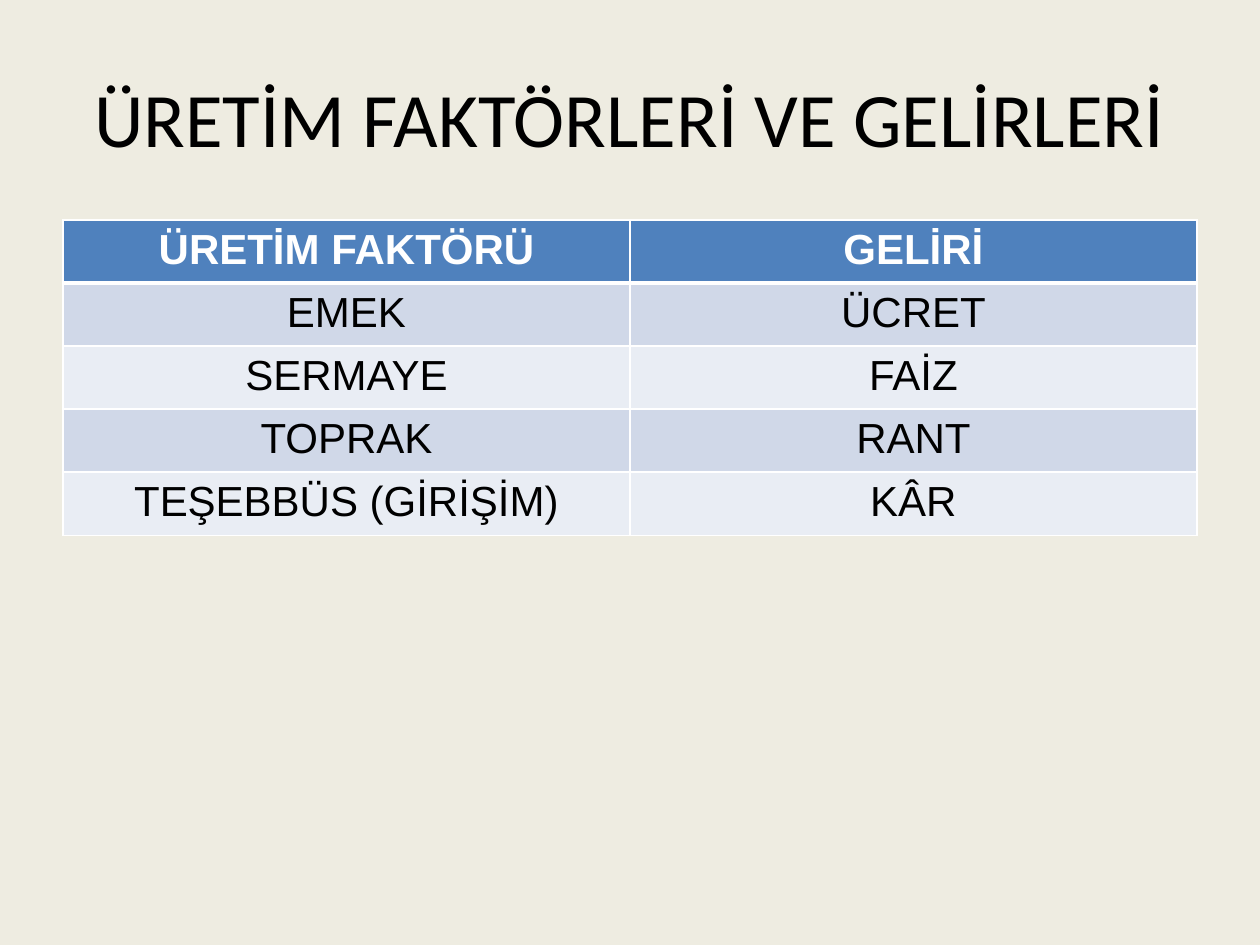
from lxml.etree import SubElement
from pptx import Presentation
from pptx.dml.color import RGBColor
from pptx.enum.text import MSO_ANCHOR, PP_ALIGN
from pptx.oxml.ns import qn
from pptx.util import Pt

PX = 914400 // 126
BACKGROUND = RGBColor(0xEE, 0xEC, 0xE1)
HEADER_BLUE = RGBColor(0x4F, 0x81, 0xBD)
BAND_DARK = RGBColor(0xD0, 0xD8, 0xE8)
BAND_LIGHT = RGBColor(0xE9, 0xED, 0xF4)
WHITE = RGBColor(0xFF, 0xFF, 0xFF)
BLACK = RGBColor(0, 0, 0)

ROWS = [
    ("ÜRETİM FAKTÖRÜ", "GELİRİ"),
    ("EMEK", "ÜCRET"),
    ("SERMAYE", "FAİZ"),
    ("TOPRAK", "RANT"),
    ("TEŞEBBÜS (GİRİŞİM)", "KÂR"),
]


def add_centred_text(frame, text, font, size, color, bold=False):
    para = frame.paragraphs[0]
    para.alignment = PP_ALIGN.CENTER
    span = para.add_run()
    span.text = text
    span.font.name = font
    span.font.size = Pt(size)
    span.font.bold = bold
    span.font.color.rgb = color


def add_border(cell, side, points):
    """Draw a white line on one side of a cell: L, R, T or B."""
    line = SubElement(cell._tc.get_or_add_tcPr(), qn(f"a:ln{side}"), w=str(Pt(points)))
    fill = SubElement(line, qn("a:solidFill"))
    SubElement(fill, qn("a:srgbClr"), val=str(WHITE))


deck = Presentation()
deck.slide_width = 1260 * PX
deck.slide_height = 945 * PX
page = deck.slides.add_slide(deck.slide_layouts[6])
page.background.fill.solid()
page.background.fill.fore_color.rgb = BACKGROUND

# Title
title = page.shapes.add_textbox(63 * PX, 38 * PX, 1134 * PX, 158 * PX)
title.text_frame.word_wrap = True
title.text_frame.vertical_anchor = MSO_ANCHOR.MIDDLE
add_centred_text(title.text_frame, "ÜRETİM FAKTÖRLERİ VE GELİRLERİ", "Calibri", 44, BLACK)

# Factors and their incomes; rows grow to fit their text
table = page.shapes.add_table(
    len(ROWS), 2, 63 * PX, 220 * PX, 1134 * PX, len(ROWS) * 52 * PX
).table
for row, texts in enumerate(ROWS):
    is_header = row == 0
    if is_header:
        fill_color = HEADER_BLUE
    else:
        fill_color = BAND_DARK if row % 2 else BAND_LIGHT
    for column, text in enumerate(texts):
        cell = table.cell(row, column)
        add_border(cell, "L", 1)
        add_border(cell, "R", 1)
        add_border(cell, "T", 3 if row == 1 else 1)
        add_border(cell, "B", 3 if is_header else 1)
        cell.fill.solid()
        cell.fill.fore_color.rgb = fill_color
        add_centred_text(cell.text_frame, text, "Arial", 24,
                         WHITE if is_header else BLACK, is_header)

deck.save("out.pptx")
